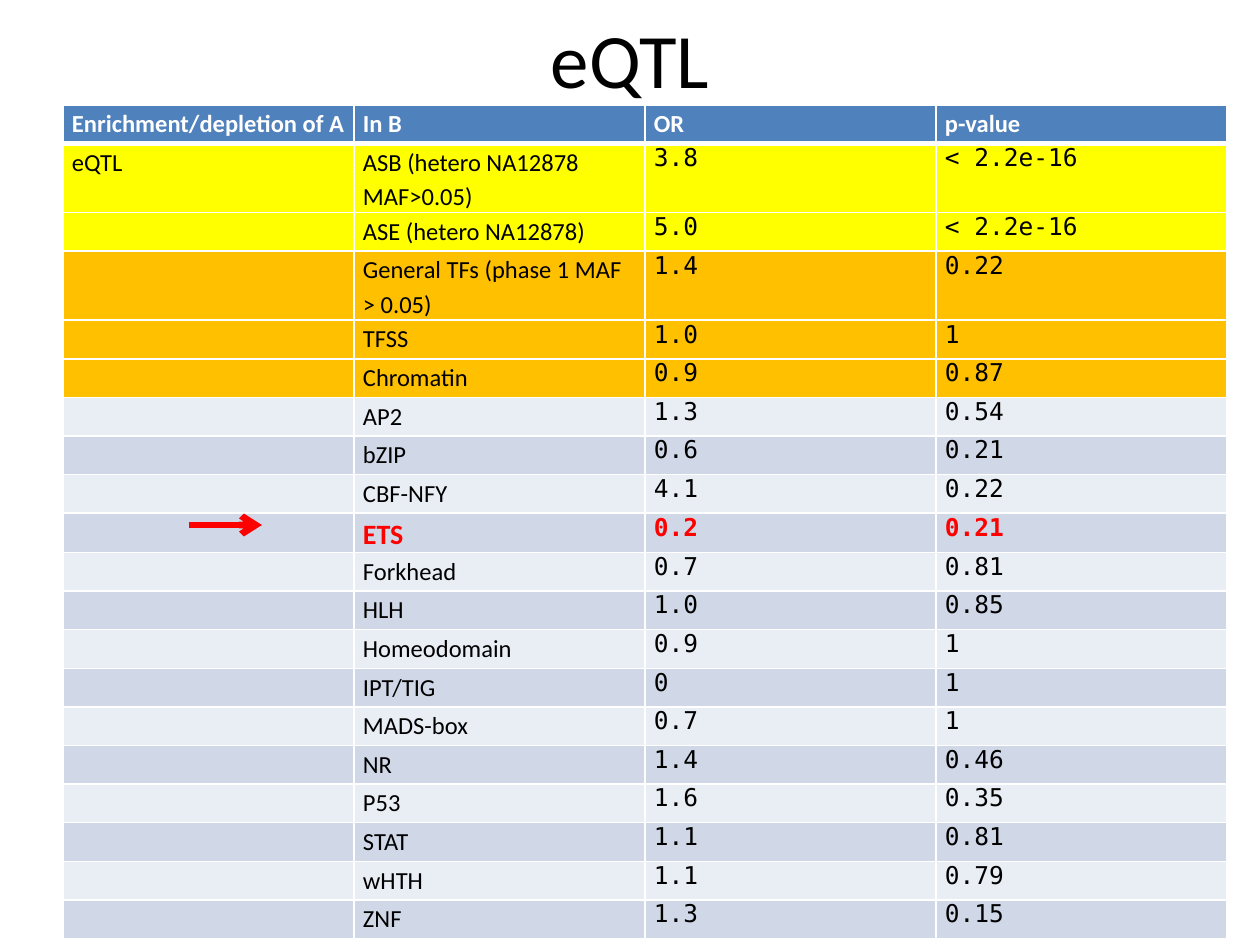
from dataclasses import dataclass

from lxml.etree import SubElement
from pptx import Presentation
from pptx.dml.color import RGBColor
from pptx.enum.shapes import MSO_CONNECTOR
from pptx.enum.text import MSO_ANCHOR, PP_ALIGN
from pptx.oxml import parse_xml
from pptx.oxml.ns import nsdecls, qn
from pptx.util import Pt

EMU_PER_PX = 7257.6  # 126 px to the inch


@dataclass(frozen=True)
class Theme:
    text_font: str = "Calibri"
    number_font: str = "DejaVu Sans Mono"
    title_size: int = 44
    table_size: int = 14
    highlight_size: int = 16
    black: str = "000000"
    white: str = "FFFFFF"
    red: str = "FF0000"
    header: str = "4F81BD"
    yellow: str = "FFFF00"
    orange: str = "FFC000"
    light_band: str = "E9EDF4"
    dark_band: str = "D0D8E8"


THEME = Theme()

HEADER = ("Enrichment/depletion of A", "In B", "OR", "p-value")
RESULTS = [
    ("eQTL", "ASB (hetero NA12878 MAF>0.05)", "3.8", "< 2.2e-16"),
    ("", "ASE (hetero NA12878)", "5.0", "< 2.2e-16"),
    ("", "General TFs (phase 1 MAF > 0.05)", "1.4", "0.22"),
    ("", "TFSS", "1.0", "1"),
    ("", "Chromatin", "0.9", "0.87"),
    ("", "AP2", "1.3", "0.54"),
    ("", "bZIP", "0.6", "0.21"),
    ("", "CBF-NFY", "4.1", "0.22"),
    ("", "ETS", "0.2", "0.21"),
    ("", "Forkhead", "0.7", "0.81"),
    ("", "HLH", "1.0", "0.85"),
    ("", "Homeodomain", "0.9", "1"),
    ("", "IPT/TIG", "0", "1"),
    ("", "MADS-box", "0.7", "1"),
    ("", "NR", "1.4", "0.46"),
    ("", "P53", "1.6", "0.35"),
    ("", "STAT", "1.1", "0.81"),
    ("", "wHTH", "1.1", "0.79"),
    ("", "ZNF", "1.3", "0.15"),
]
HIGHLIGHT = "ETS"
TWO_LINE_ROWS = (1, 3)


def px(length):
    return round(length * EMU_PER_PX)


def rgb(color):
    return RGBColor.from_string(color)


def style_font(font, name, size, color, bold=False):
    font.name, font.size, font.bold = name, Pt(size), bold
    font.color.rgb = rgb(color)


def row_fill(row):
    if row == 0:
        return THEME.header
    if row <= 2:
        return THEME.yellow
    if row <= 5:
        return THEME.orange
    return THEME.dark_band if row % 2 else THEME.light_band


def set_borders(cell, row):
    # A thicker rule separates the header from the results
    thick_side = {0: "lnB", 1: "lnT"}.get(row)
    properties = cell._tc.get_or_add_tcPr()
    for side in ("lnL", "lnR", "lnT", "lnB"):
        width = Pt(3 if side == thick_side else 1)
        properties.append(parse_xml(
            f'<a:{side} {nsdecls("a")} w="{width}"><a:solidFill>'
            f'<a:srgbClr val="{THEME.white}"/></a:solidFill></a:{side}>'))


def fill_cell(cell, row, column, text, highlighted):
    set_borders(cell, row)
    cell.fill.solid()
    cell.fill.fore_color.rgb = rgb(row_fill(row))
    cell.margin_left = cell.margin_right = px(9)
    cell.margin_top = cell.margin_bottom = 0
    if not text:
        return
    is_header = row == 0
    is_number = not is_header and column >= 2
    para = cell.text_frame.paragraphs[0]
    para.text = text
    if not is_number:
        para.line_spacing = 1.15
    color = THEME.white if is_header else THEME.red if highlighted else THEME.black
    size = THEME.highlight_size if highlighted and not is_number else THEME.table_size
    font_name = THEME.number_font if is_number else THEME.text_font
    style_font(para.runs[0].font, font_name, size, color, is_header or highlighted)


def add_title(slide, text):
    title = slide.shapes.title
    title.left, title.top, title.width, title.height = px(63), px(-21), px(1134), px(158)
    frame = title.text_frame
    frame.text = text
    frame.vertical_anchor = MSO_ANCHOR.MIDDLE
    para = frame.paragraphs[0]
    para.alignment = PP_ALIGN.CENTER
    style_font(para.runs[0].font, THEME.text_font, THEME.title_size, THEME.black)


def add_results_table(slide):
    rows = [HEADER, *RESULTS]
    single_row = px(193) // 5  # five single-line rows share 193 px
    heights = [px(69) if row in TWO_LINE_ROWS else single_row for row in range(len(rows))]
    table = slide.shapes.add_table(
        len(rows), len(HEADER), px(63), px(105), px(1164), sum(heights)).table
    for column in table.columns:
        column.width = px(291)
    for row, values in enumerate(rows):
        table.rows[row].height = heights[row]
        for column, text in enumerate(values):
            fill_cell(table.cell(row, column), row, column, text, values[1] == HIGHLIGHT)


def add_arrow(slide, left, right, y):
    arrow = slide.shapes.add_connector(
        MSO_CONNECTOR.STRAIGHT, px(left), px(y), px(right), px(y))
    arrow.line.color.rgb = rgb(THEME.red)
    arrow.line.width = Pt(3.75)
    SubElement(arrow.line._get_or_add_ln(), qn("a:tailEnd"), type="arrow")
    SubElement(arrow._element.spPr, qn("a:effectLst"))


def main():
    deck = Presentation()
    deck.slide_width, deck.slide_height = px(1260), px(945)
    slide = deck.slides.add_slide(deck.slide_layouts[5])
    add_title(slide, "eQTL")
    add_results_table(slide)
    # Pointer to the highlighted row
    add_arrow(slide, 189, 262, 525)
    deck.save("out.pptx")


if __name__ == "__main__":
    main()
